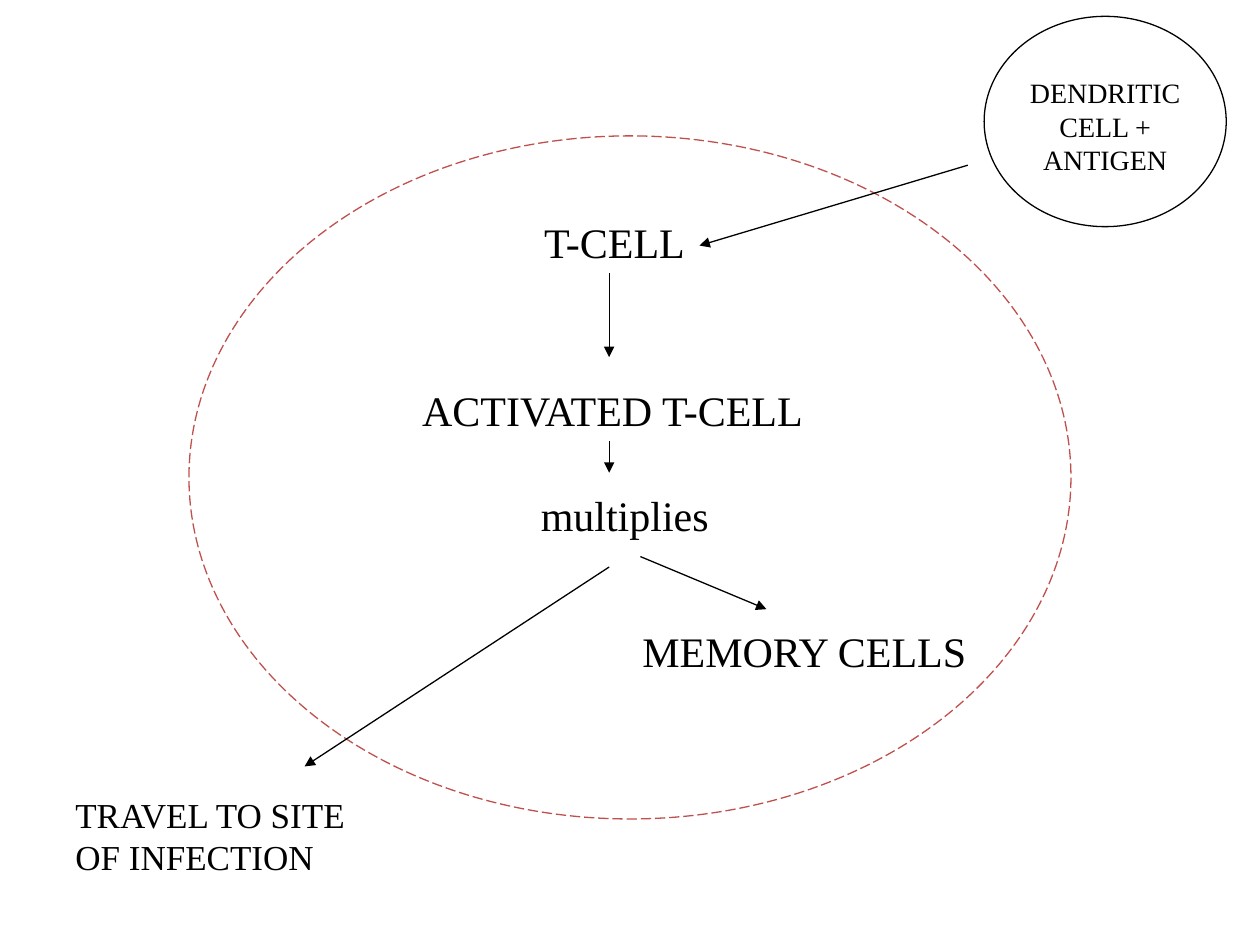
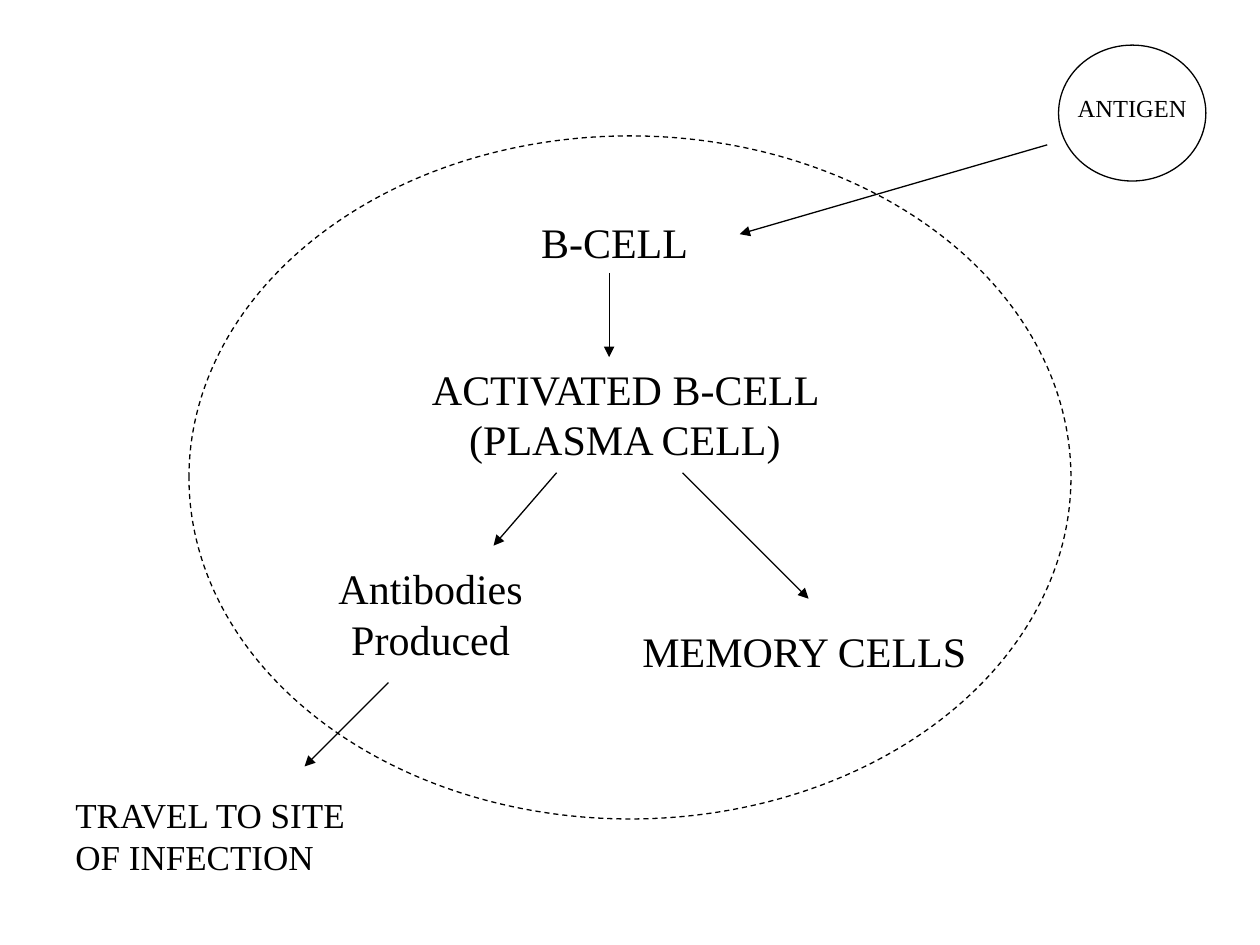
from dataclasses import dataclass

from lxml import etree
from pptx import Presentation
from pptx import util as u
from pptx.dml.color import RGBColor
from pptx.enum import dml, shapes, text
from pptx.oxml.ns import qn

FONT = "Times New Roman"
BLACK = "000000"
RED = "C0504D"
LINE_WIDTH = u.Pt(0.75)
STEM_X = 12.28  # centre line of the downward arrows


# All lengths in the descriptions below are centimetres
@dataclass(frozen=True)
class Label:
    words: str
    left: float
    top: float
    width: float
    height: float = 1.27
    size: int = 24
    centred: bool = True


@dataclass(frozen=True)
class Arrow:
    x1: float
    y1: float
    x2: float
    y2: float


@dataclass(frozen=True)
class Oval:
    left: float
    top: float
    width: float
    height: float


@dataclass(frozen=True)
class Pathway:
    membrane_colour: str
    membrane_dash: dml.MSO_LINE
    trigger: Oval
    trigger_label: Label
    labels: tuple[Label, ...]
    arrows: tuple[Arrow, ...]


# Parts that both pathways share
MEMBRANE = Oval(3.81, 2.74, 17.78, 13.77)
SHARED_LABELS = (
    Label("MEMORY CELLS", 12.7, 12.49, 7.41, centred=False),
    Label("TRAVEL TO SITE OF INFECTION", 1.27, 15.88, 6.35, 1.96, 20, False),
)
SHARED_ARROWS = (Arrow(STEM_X, 5.5, STEM_X, 7.2),)

T_CELL = Pathway(
    RED,
    dml.MSO_LINE.LONG_DASH,
    Oval(19.84, 0.33, 4.88, 4.24),
    Label("DENDRITIC CELL + ANTIGEN", 19.84, 1.4, 4.88, 2.31, 16),
    (
        Label("T-CELL", 9.53, 4.23, 5.72),
        Label("ACTIVATED T-CELL", 8.26, 7.62, 8.68, centred=False),
        Label("multiplies", 8.89, 9.74, 7.41),
    ),
    (
        Arrow(STEM_X, 8.89, STEM_X, 9.53),
        Arrow(12.91, 11.22, 15.45, 12.28),
        Arrow(STEM_X, 11.43, 6.14, 15.45),
        Arrow(19.51, 3.33, 14.1, 4.95),
    ),
)

B_CELL = Pathway(
    BLACK,
    dml.MSO_LINE.DASH,
    Oval(21.34, 0.91, 2.97, 2.74),
    Label("ANTIGEN", 21.34, 1.75, 2.97, 0.84, 14),
    (
        Label("B-CELL", 9.53, 4.23, 5.72),
        Label("ACTIVATED B-CELL (PLASMA CELL)", 8.26, 7.2, 8.68, 2.29),
        Label("Antibodies Produced", 6.35, 11.22, 4.66, 2.29),
    ),
    (
        Arrow(13.76, 9.53, 16.3, 12.07),
        Arrow(11.22, 9.53, 9.95, 11),
        Arrow(7.83, 13.76, 6.14, 15.45),
        Arrow(21.11, 2.92, 14.91, 4.72),
    ),
)


def colour(value: str) -> RGBColor:
    return RGBColor.from_string(value)


def draw_oval(parent, oval: Oval, line_colour: str = BLACK, dash=None) -> None:
    shape = parent.shapes.add_shape(
        shapes.MSO_SHAPE.OVAL,
        u.Cm(oval.left), u.Cm(oval.top), u.Cm(oval.width), u.Cm(oval.height),
    )
    shape.shadow.inherit = False
    shape.fill.background()
    shape.line.color.rgb = colour(line_colour)
    shape.line.width = LINE_WIDTH
    if dash is not None:
        shape.line.dash_style = dash


def draw_label(parent, label: Label) -> None:
    box = parent.shapes.add_textbox(
        u.Cm(label.left), u.Cm(label.top), u.Cm(label.width), u.Cm(label.height)
    )
    frame = box.text_frame
    frame.text = label.words
    frame.word_wrap = True
    frame.auto_size = text.MSO_AUTO_SIZE.SHAPE_TO_FIT_TEXT
    para = frame.paragraphs[0]
    para.alignment = text.PP_ALIGN.CENTER if label.centred else text.PP_ALIGN.LEFT
    span = para.runs[0]
    span.font.name = FONT
    span.font.size = u.Pt(label.size)
    span.font.color.rgb = colour(BLACK)


def draw_arrow(page, arrow: Arrow) -> None:
    connector = page.shapes.add_connector(
        shapes.MSO_CONNECTOR.STRAIGHT,
        u.Cm(arrow.x1), u.Cm(arrow.y1), u.Cm(arrow.x2), u.Cm(arrow.y2),
    )
    connector.line.color.rgb = colour(BLACK)
    connector.line.width = LINE_WIDTH
    # Arrowhead at the end, no shadow
    properties = connector.element.spPr
    etree.SubElement(properties.find(qn("a:ln")), qn("a:tailEnd"), type="triangle")
    etree.SubElement(properties, qn("a:effectLst"))


def draw_pathway(page, pathway: Pathway) -> None:
    draw_oval(page, MEMBRANE, pathway.membrane_colour, pathway.membrane_dash)
    for label in pathway.labels + SHARED_LABELS:
        draw_label(page, label)
    for arrow in SHARED_ARROWS + pathway.arrows:
        draw_arrow(page, arrow)
    # The triggering cell or antigen outside the membrane
    group = page.shapes.add_group_shape()
    draw_oval(group, pathway.trigger)
    draw_label(group, pathway.trigger_label)


def main() -> None:
    deck = Presentation()
    deck.slide_width = u.Cm(25.4)
    deck.slide_height = u.Cm(19.05)
    for pathway in (T_CELL, B_CELL):
        draw_pathway(deck.slides.add_slide(deck.slide_layouts[6]), pathway)
    deck.save("out.pptx")


if __name__ == "__main__":
    main()
